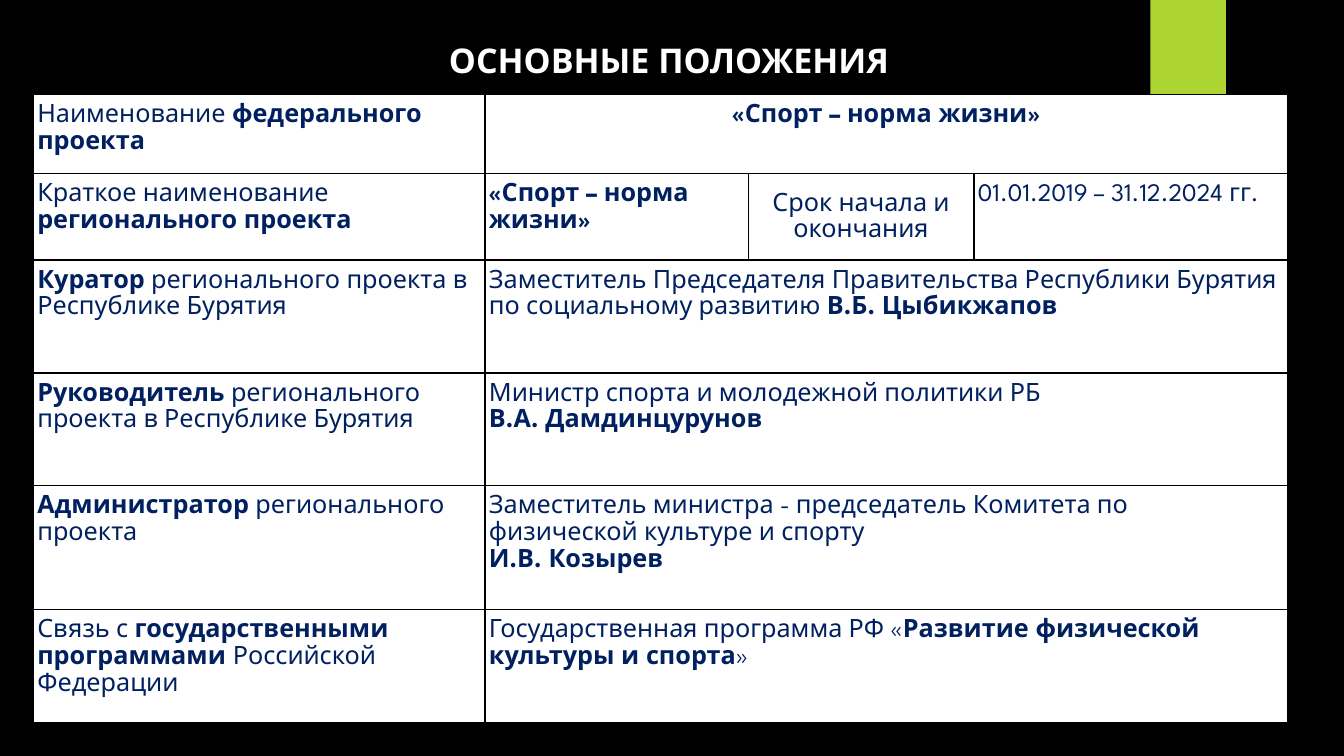
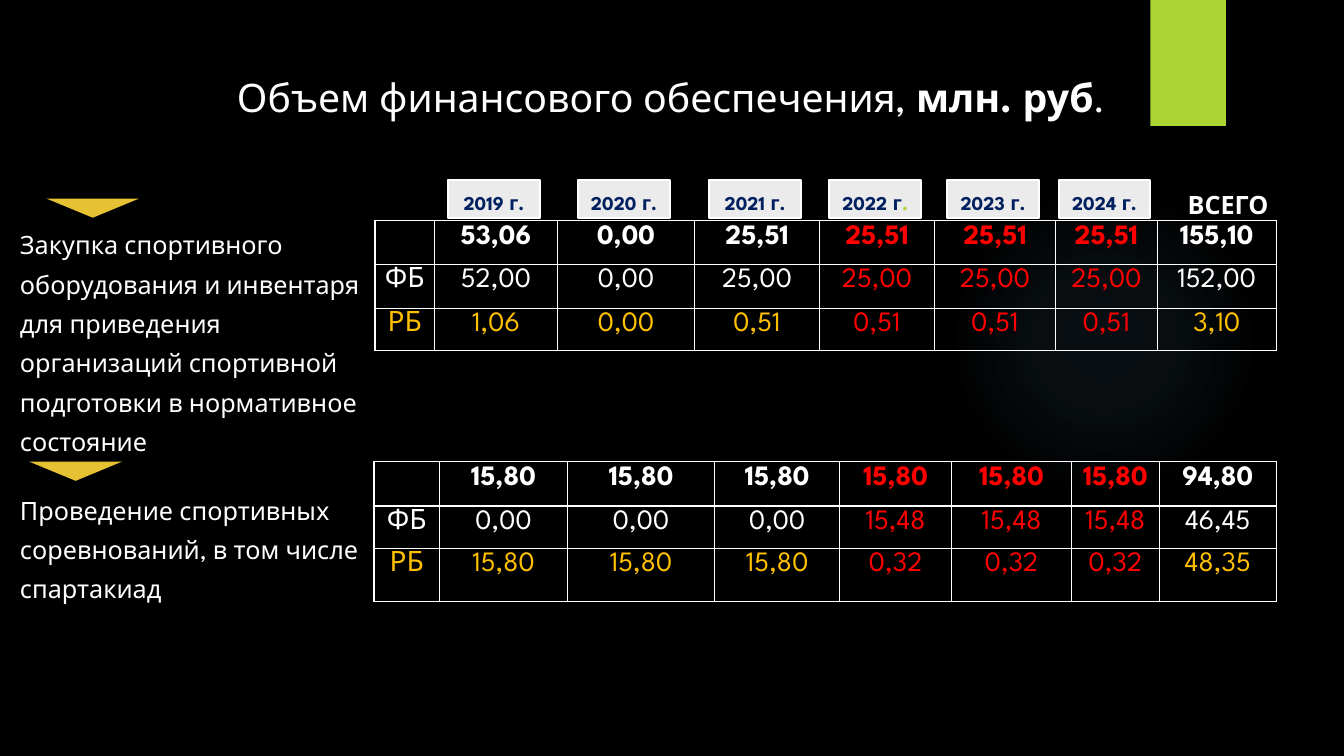
"""Build two slides on a regional sports project: key facts and funding."""
from dataclasses import dataclass
from itertools import accumulate

from lxml import etree
from pptx import Presentation
from pptx.dml.color import RGBColor
from pptx.enum.shapes import MSO_SHAPE
from pptx.enum.text import MSO_ANCHOR, MSO_AUTO_SIZE, PP_ALIGN
from pptx.oxml import parse_xml
from pptx.oxml.ns import nsdecls, qn
from pptx.util import Inches, Pt


@dataclass(frozen=True)
class Theme:
    font: str = "League Spartan"
    black: str = "000000"
    white: str = "FFFFFF"
    navy: str = "002060"
    green: str = "ACD433"
    gold: str = "FFC000"
    arrow: str = "E6C133"
    red: str = "FF0000"
    tag: str = "EBEBEB"
    glow: str = "7AC4F0"
    heading: float = 24.3
    title: float = 28
    figure: float = 20
    body: float = 18
    year: float = 14
    line_spacing: float = 1.3
    cell_spacing: float = 1.15


THEME = Theme()
LEFT, CENTER = PP_ALIGN.LEFT, PP_ALIGN.CENTER

FACTS_TITLE = [[("ОСНОВНЫЕ ПОЛОЖЕНИЯ", True)]]
FACTS = [
    ([[("Наименование ", False), ("федерального проекта", True)]],
     [[("«Спорт – норма жизни»", True)]]),
    ([[("Краткое наименование ", False), ("регионального проекта", True)]],
     [[("«Спорт – норма жизни»", True)]],
     [[("Срок начала и окончания", False)]],
     [[("01.01.2019 – 31.12.2024 гг.", False)]]),
    ([[("Куратор", True), (" регионального проекта в Республике Бурятия", False)]],
     [[("Заместитель Председателя Правительства Республики Бурятия "
        "по социальному развитию ", False), ("В.Б. Цыбикжапов", True)]]),
    ([[("Руководитель", True), (" регионального проекта в Республике Бурятия", False)]],
     [[("Министр спорта и молодежной политики РБ", False)],
      [("В.А. Дамдинцурунов", True)]]),
    ([[("Администратор", True), (" регионального проекта", False)]],
     [[("Заместитель министра - председатель Комитета по физической культуре "
        "и спорту", False)],
      [("И.В. Козырев", True)]]),
    ([[("Связь с ", False), ("государственными программами ", True),
       ("Российской Федерации", False)]],
     [[("Государственная программа РФ «", False),
       ("Развитие физической культуры и спорта", True), ("»", False)]]),
]
FACTS_PLACE = (0.33, 0.94)
FACTS_COLUMNS = [4.48, 2.61, 2.24, 3.11]
FACTS_ROWS = [0.78, 0.86, 1.12, 1.12, 1.23, 1.12]
FACTS_CENTERED = {(0, 1), (1, 2)}
FACTS_MIDDLE = (1, 2)

FUNDING_TITLE = [[("Объем финансового обеспечения, ", False), ("млн. руб", True),
                  (".", False)]]
TOTAL = [[("ВСЕГО", True)]]
YEARS = [[("2019 г.", True)], [("2020 г.", True)], [("2021 г.", True)],
         [("2022 г", True), (".", True, THEME.green)],
         [("2023 г.", True)], [("2024 г.", True)]]
ACTIVITIES = [
    dict(text="Закупка спортивного оборудования и инвентаря для приведения "
              "организаций спортивной подготовки в нормативное состояние",
         text_place=(0.1, 2.14, 3.73, 1.92), arrow=(0.46, 1.97), place=(3.72, 2.19),
         columns=[0.59, 1.22, 1.36, 1.24, 1.14, 1.2, 1.01, 1.18],
         rows=[0.43, 0.44, 0.42],
         figures=[
             ["", "53,06", "0,00", "25,51", "25,51", "25,51", "25,51", "155,10"],
             ["ФБ", "52,00", "0,00", "25,00", "25,00", "25,00", "25,00", "152,00"],
             ["РБ", "1,06", "0,00", "0,51", "0,51", "0,51", "0,51", "3,10"]]),
    dict(text="Проведение спортивных соревнований, в том числе спартакиад",
         text_place=(0.1, 4.77, 3.73, 1.01), arrow=(0.29, 4.58), place=(3.71, 4.58),
         columns=[0.65, 1.27, 1.46, 1.24, 1.11, 1.19, 0.87, 1.16],
         rows=[0.44, 0.42, 0.53],
         figures=[
             ["", "15,80", "15,80", "15,80", "15,80", "15,80", "15,80", "94,80"],
             ["ФБ", "0,00", "0,00", "0,00", "15,48", "15,48", "15,48", "46,45"],
             ["РБ", "15,80", "15,80", "15,80", "0,32", "0,32", "0,32", "48,35"]]),
]
ROW_COLORS = [THEME.white, THEME.white, THEME.gold]
FORECAST_COLUMNS = range(4, 7)
YEAR_WIDTH, YEAR_HEIGHT, YEAR_TOP, YEAR_SHIFT = 0.91, 0.37, 1.79, -0.02


def rgb(color):
    return RGBColor.from_string(color)


def box(*lengths):
    return [Inches(length) for length in lengths]


def write(frame, paragraphs, size, color, align=LEFT, spacing=THEME.line_spacing):
    for index, runs in enumerate(paragraphs):
        paragraph = frame.paragraphs[0] if index == 0 else frame.add_paragraph()
        paragraph.alignment = align
        paragraph.line_spacing = spacing
        paragraph.font.size = Pt(size)
        for text, bold, *own_color in runs:
            run = paragraph.add_run()
            run.text = text
            run.font.name = THEME.font
            run.font.size = Pt(size)
            run.font.bold = bold
            run.font.color.rgb = rgb(own_color[0] if own_color else color)


def add_solid(slide, preset, place, fill, line=None):
    shape = slide.shapes.add_shape(preset, *box(*place))
    shape.shadow.inherit = False
    shape.fill.solid()
    shape.fill.fore_color.rgb = rgb(fill)
    if line:
        shape.line.color.rgb = rgb(line)
        shape.line.width = Pt(1.5)
    else:
        shape.line.fill.background()
    return shape


def add_text(slide, place, paragraphs, align=LEFT):
    frame = slide.shapes.add_textbox(*box(*place)).text_frame
    frame.word_wrap = True
    write(frame, paragraphs, THEME.body, THEME.white, align)


def set_title(slide, place, paragraphs, size, align):
    title = slide.shapes.title
    title.left, title.top, title.width, title.height = box(*place)
    frame = title.text_frame
    frame.auto_size = MSO_AUTO_SIZE.NONE
    frame.word_wrap = True
    frame.vertical_anchor = MSO_ANCHOR.MIDDLE
    write(frame, paragraphs, size, THEME.white, align)


def decorate(layout, slide):
    glow = add_solid(slide, MSO_SHAPE.OVAL, (9.41, 1.83, 3.08, 3.08), THEME.glow)
    stops = "".join(
        f'<a:gs pos="{share * 1000}"><a:srgbClr val="{THEME.glow}">'
        f'<a:alpha val="{alpha * 1000}"/></a:srgbClr></a:gs>'
        for share, alpha in [(0, 7), (36, 6), (69, 0), (100, 0)])
    gradient = parse_xml(
        f'<a:gradFill {nsdecls("a")} rotWithShape="1"><a:gsLst>{stops}</a:gsLst>'
        '<a:path path="circle"><a:fillToRect l="50000" t="50000" r="50000" '
        'b="50000"/></a:path></a:gradFill>')
    properties = glow.element.spPr
    properties.replace(properties.find(qn("a:solidFill")), gradient)
    ribbon = add_solid(slide, MSO_SHAPE.RECTANGLE, (11.41, 0, 0.75, 1.25), THEME.green)
    for shape in (glow, ribbon):
        layout.shapes.element.append(shape.element)


def format_cell(cell, side, edge, border, fill=None):
    cell.margin_left = cell.margin_right = Inches(side)
    cell.margin_top = cell.margin_bottom = Inches(edge)
    if fill:
        cell.fill.solid()
        cell.fill.fore_color.rgb = rgb(fill)
    else:
        cell.fill.background()
    properties = cell._tc.get_or_add_tcPr()
    for index, name in enumerate(("lnL", "lnR", "lnT", "lnB")):
        line = etree.Element(qn(f"a:{name}"), w=str(Pt(1)))
        solid = etree.SubElement(line, qn("a:solidFill"))
        etree.SubElement(solid, qn("a:srgbClr"), val=border)
        properties.insert(index, line)


def add_grid(slide, place, columns, rows):
    table = slide.shapes.add_table(
        len(rows), len(columns), *box(*place, sum(columns), sum(rows))).table
    table.first_row = table.horz_banding = False
    for column, width in zip(table.columns, columns):
        column.width = Inches(width)
    for row, height in zip(table.rows, rows):
        row.height = Inches(height)
    return table


def build_facts(slide):
    set_title(slide, (0.89, 0.2, 11.49, 0.67), FACTS_TITLE, THEME.heading, CENTER)
    table = add_grid(slide, FACTS_PLACE, FACTS_COLUMNS, FACTS_ROWS)
    for cell in table.iter_cells():
        format_cell(cell, 0.04, 0.07, THEME.black, THEME.white)
    for row, entries in enumerate(FACTS):
        if len(entries) == 2:
            table.cell(row, 1).merge(table.cell(row, len(FACTS_COLUMNS) - 1))
        for column, paragraphs in enumerate(entries):
            align = CENTER if (row, column) in FACTS_CENTERED else LEFT
            write(table.cell(row, column).text_frame, paragraphs, THEME.body,
                  THEME.navy, align, THEME.cell_spacing)
    table.cell(*FACTS_MIDDLE).vertical_anchor = MSO_ANCHOR.MIDDLE


def add_years(slide, left, columns):
    edges = list(accumulate(columns, initial=left))
    for runs, start, width in zip(YEARS, edges[1:], columns[1:]):
        year_left = start + (width - YEAR_WIDTH) / 2 + YEAR_SHIFT
        tag = add_solid(slide, MSO_SHAPE.RECTANGLE,
                        (year_left, YEAR_TOP, YEAR_WIDTH, YEAR_HEIGHT),
                        THEME.tag, THEME.white)
        tag.text_frame.vertical_anchor = MSO_ANCHOR.MIDDLE
        write(tag.text_frame, [runs], THEME.year, THEME.navy, CENTER)


def add_activity(slide, activity):
    add_text(slide, activity["text_place"], [[(activity["text"], False)]])
    arrow = add_solid(slide, MSO_SHAPE.ISOSCELES_TRIANGLE,
                      (*activity["arrow"], 0.92, 0.19), THEME.arrow)
    arrow.rotation = 180
    table = add_grid(slide, activity["place"], activity["columns"], activity["rows"])
    for row, figures in enumerate(activity["figures"]):
        for column, figure in enumerate(figures):
            cell = table.cell(row, column)
            format_cell(cell, 0.07 if column else 0.02, 0, THEME.white)
            color = THEME.red if column in FORECAST_COLUMNS else ROW_COLORS[row]
            runs = [(figure, row == 0)] if figure else []
            write(cell.text_frame, [runs], THEME.figure, color, CENTER,
                  THEME.cell_spacing)


def build_funding(slide):
    set_title(slide, (2.25, 0.61, 9.35, 0.57), FUNDING_TITLE, THEME.title, LEFT)
    add_years(slide, ACTIVITIES[0]["place"][0], ACTIVITIES[0]["columns"])
    for activity in ACTIVITIES:
        add_activity(slide, activity)
    add_text(slide, (11.63, 1.74, 1.1, 0.4), TOTAL, CENTER)


def main():
    deck = Presentation()
    deck.slide_width, deck.slide_height = box(13.33, 7.5)
    background = deck.slide_master.background.fill
    background.solid()
    background.fore_color.rgb = rgb(THEME.black)
    layout = deck.slide_layouts[5]
    facts, funding = (deck.slides.add_slide(layout) for _ in range(2))
    decorate(layout, facts)
    build_facts(facts)
    build_funding(funding)
    deck.save("out.pptx")


if __name__ == "__main__":
    main()
